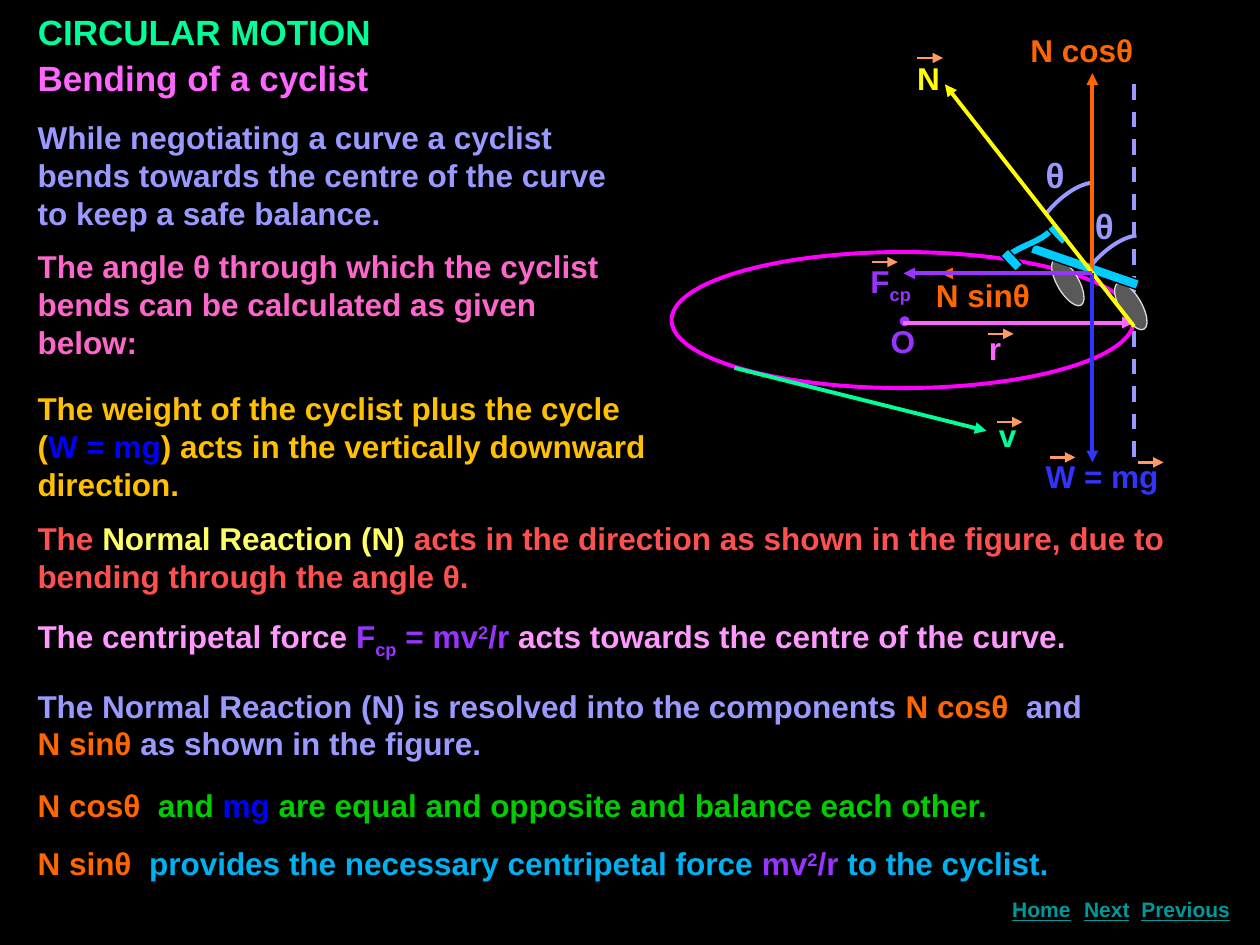
from lxml import etree
from pptx import Presentation
from pptx.dml.color import RGBColor
from pptx.enum.dml import MSO_LINE
from pptx.enum.shapes import MSO_CONNECTOR, MSO_SHAPE
from pptx.enum.text import MSO_ANCHOR, MSO_AUTO_SIZE, PP_ALIGN
from pptx.oxml.ns import qn
from pptx.util import Inches, Pt

OVAL, RECT, WAVE = MSO_SHAPE.OVAL, MSO_SHAPE.RECTANGLE, MSO_SHAPE.WAVE
LEFT, MID = PP_ALIGN.LEFT, PP_ALIGN.CENTER
HEX = dict(
    black="000000", lilac="9999FF", pink="FF66FF", magenta="FF00FF", rose="FF66CC",
    blush="FF99FF", gray="595959", silver="DDDDDD", cyan="00CCFF", sky="00B0F0",
    purple="9933FF", orange="FF6600", peach="FF9966", mint="00FF99", green="00CC00",
    gold="FFC000", yellow="FFFF00", lemon="FFFF66", red="FF5050", blue="0000FF",
    royal="3333FF", teal="009999",
)
RGB = {name: RGBColor.from_string(code) for name, code in HEX.items()}

deck = Presentation()
deck.slide_width, deck.slide_height = Inches(10), Inches(7.5)
CELL = deck.slide_width / 100  # grid of 100 columns and 75 rows
slide = deck.slides.add_slide(deck.slide_layouts[5])
slide.background.fill.solid()
slide.background.fill.fore_color.rgb = RGB["black"]
shapes = slide.shapes


def write(box, paras, size=18, wrap=True, align=LEFT, under=None, shape=None):
    """Fill a text box with paragraphs, each a list of (text, colour, baseline)."""
    left, top, wide, high = [round(n * CELL) for n in box]
    shape = shape or shapes.add_textbox(left, top, wide, high)
    shape.left, shape.top, shape.width, shape.height = left, top, wide, high
    frame = shape.text_frame
    frame.word_wrap = wrap
    frame.auto_size = MSO_AUTO_SIZE.SHAPE_TO_FIT_TEXT
    frame.vertical_anchor = MSO_ANCHOR.TOP
    for i, runs in enumerate(paras):
        para = frame.add_paragraph() if i else frame.paragraphs[0]
        para.alignment = align
        para.space_before = Pt(size / 2 if i else 0)
        font = para.font
        font.name, font.size, font.bold, font.underline = "Arial", Pt(size), True, under
        for words, color, *base in runs:
            run = para.add_run()
            run.text = words
            run.font.color.rgb = RGB[color]
            if base:
                run.font._element.set("baseline", str(base[0] * 1000))


def draw(start, end, color, width=2.25, head=True):
    """Draw a straight line, with an arrowhead at its end."""
    ends = [round(n * CELL) for n in (*start, *end)]
    link = shapes.add_connector(MSO_CONNECTOR.STRAIGHT, *ends)
    link.line.color.rgb = RGB[color]
    link.line.width = Pt(width)
    if head:
        etree.SubElement(link.line._get_or_add_ln(), qn("a:tailEnd"), type="triangle")
    etree.SubElement(link._element.spPr, qn("a:effectLst"))
    return link


# Title and subtitle
write((2, 0.3, 30.7, 4.4), [[("CIRCULAR MOTION", "mint")]], 20, shape=shapes.title)
write((2, 4, 30.3, 4.4), [[("Bending of a cyclist", "pink")]], 20)

# Vertical through the point of contact
hub, foot = (86.7, 21.7), (90, 25.6)
plumb = draw((foot[0], 6.7), (foot[0], 36.7), "lilac", head=False)
plumb.line.dash_style = MSO_LINE.DASH

# Track, wheels, frame and handlebar, centre: kind, box, turn, fill, line, width
parts = [
    (OVAL, (53.3, 20, 36.7, 10.8), 0, None, "magenta", 2.25),
    (OVAL, (88.9, 22.2, 1.7, 4.2), -30.2, "gray", "silver", 0.75),
    (OVAL, (83.9, 20.3, 1.7, 4.2), -30.2, "gray", "silver", 0.75),
    (RECT, (85.7, 16.7, 0.8, 8.9), -71, "cyan", "black", 0.75),
    (WAVE, (79.5, 19, 4.2, 0.8), -31.4, "cyan", "black", 0.75),
    (RECT, (79.9, 19.8, 0.8, 1.7), -43.4, "cyan", "black", 0.75),
    (RECT, (83.6, 17.7, 0.8, 1.7), -43.4, "cyan", "black", 0.75),
    (OVAL, (71.4, 25.1, 0.8, 0.8), 0, "purple", None, 0),
]
for kind, box, turn, fill, edge, width in parts:
    part = shapes.add_shape(kind, *[round(n * CELL) for n in box])
    part.shadow.inherit = False
    part.rotation = turn
    if fill:
        part.fill.solid()
        part.fill.fore_color.rgb = RGB[fill]
    else:
        part.fill.background()
    if edge:
        part.line.color.rgb = RGB[edge]
        part.line.width = Pt(width)
    else:
        part.line.fill.background()
    if kind == WAVE:
        part.adjustments[0] = 0.13

# Angle arcs: one cubic curve, sampled, drawn at both places
curve = [(0, 0), (1.1, -1.4), (2.6, -2.4), (3.7, -2.5)]
steps = [i / 16 for i in range(17)]
for x, y in ((83, 17), (86.5, 21.2)):
    dots = []
    for t in steps:
        mix = ((1 - t) ** 3, 3 * t * (1 - t) ** 2, 3 * t * t * (1 - t), t ** 3)
        dx, dy = [sum(m * p[axis] for m, p in zip(mix, curve)) for axis in (0, 1)]
        dots.append((round((x + dx) * CELL), round((y + dy) * CELL)))
    path = shapes.build_freeform(*dots[0])
    path.add_line_segments(dots[1:], close=False)
    arc = path.convert_to_shape()
    arc.shadow.inherit = False
    arc.fill.background()
    arc.line.color.rgb = RGB["lilac"]
    arc.line.width = Pt(2.25)

# Forces, radius and velocity
arrows = [
    (hub, (74.7, 21.7), "orange"),
    (hub, (86.7, 5.8), "orange"),
    ((71.7, 25.6), foot, "pink"),
    ((90, 25.9), (75, 6.7), "yellow"),
    ((58.3, 29.2), (78.3, 34.2), "mint"),
    (hub, (86.7, 36.7), "royal"),
    (hub, (71.7, 21.7), "purple"),
]
for start, end, color in arrows:
    draw(start, end, color)

# Figure labels
labels = [
    ((82, 11.7, 3.3, 4.4), "θ", "lilac", 20),
    ((85.9, 15.7, 3.5, 4.4), "θ", "lilac", 20),
    ((69.7, 25.1, 4.2, 4), "O", "purple", 18),
    ((73.3, 21.4, 9.5, 4), "N sinθ", "orange", 18),
    ((80.8, 2, 12.5, 4), "N cosθ", "orange", 18),
    ((71.8, 4.2, 5, 4), "N", "yellow", 18),
    ((78.3, 32.5, 4.2, 4), "v", "mint", 18),
    ((82, 35.8, 11.5, 4), "W = mg", "royal", 18),
    ((77.5, 25.6, 3.3, 4), "r", "pink", 18),
]
for box, words, color, size in labels:
    write(box, [[(words, color)]], size, wrap=False)
write((68.1, 20.3, 5.5, 4), [[("F", "purple"), ("cp", "purple", -25)]], wrap=False)

# Vector marks over the labels
marks = [(72.8, 4.6), (79.1, 33.5), (83.3, 36.3), (90.3, 36.7), (78.4, 26.5), (69.2, 20.8)]
for x, y in marks:
    draw((x, y), (x + 2.05, y), "peach", 1.5)

# Explanations: top, width, height, paragraphs
notes = [
    (8.9, 48.8, 20.7, [
        [("While negotiating a curve a cyclist bends towards the centre of the curve "
          "to keep a safe balance.", "lilac")],
        [("The angle θ through which the cyclist bends can be calculated as given "
          "below:", "rose")]]),
    (30.4, 51.4, 10.1, [
        [("The weight of the cyclist plus the cycle (", "gold"), ("W = mg", "blue"),
         (") acts in the vertically downward direction.", "gold")]]),
    (40.7, 95.3, 7.1, [
        [("The ", "red"), ("Normal Reaction (N) ", "lemon"),
         ("acts in the direction as shown in the figure, due to bending through "
          "the angle θ.", "red")]]),
    (48.5, 85.7, 4, [
        [("The centripetal force ", "blush"), ("F", "purple"), ("cp", "purple", -25),
         (" = mv", "purple"), ("2", "purple", 30), ("/r ", "purple"),
         ("acts towards the centre of the curve.", "blush")]]),
    (54, 85.7, 7.1, [
        [("The Normal Reaction (N) is resolved into the components ", "lilac"),
         ("N cosθ  ", "orange"), ("and ", "lilac"), ("N sinθ ", "orange"),
         ("as shown in the figure.", "lilac")]]),
    (61.9, 78.5, 4, [
        [("N cosθ  ", "orange"), ("and ", "green"), ("mg", "blue"),
         (" are equal and opposite and balance each other.", "green")]]),
    (66.5, 85.7, 4, [
        [("N sinθ  ", "orange"), ("provides the necessary centripetal force ", "sky"),
         ("mv", "purple"), ("2", "purple", 30), ("/r", "purple"),
         (" to the cyclist.", "sky")]]),
]
for top, wide, high, paras in notes:
    write((2, top, wide, high), paras)

# Footer words
for x, wide, word in ((79.1, 7.1, "Home"), (84.7, 6.3, "Next"), (89.4, 9.4, "Previous")):
    write((x, 70.7, wide, 3), [[(word, "teal")]], 12, align=MID, under=True)

deck.save("out.pptx")
